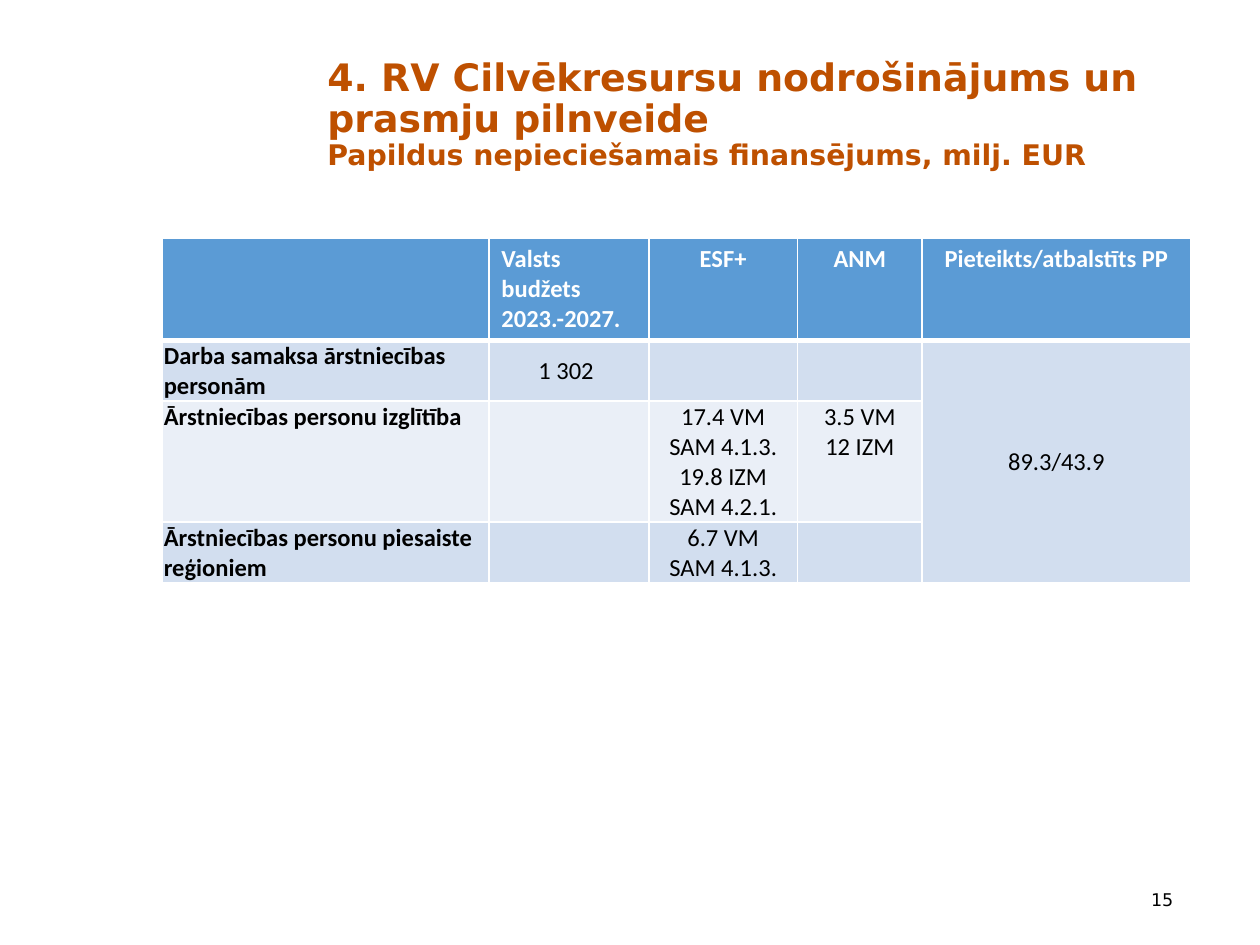
from lxml.etree import SubElement
from pptx import Presentation
from pptx.dml.color import RGBColor
from pptx.enum.text import MSO_ANCHOR, PP_ALIGN
from pptx.oxml.ns import qn
from pptx.util import Inches, Pt

COLS = [2.59, 1.27, 1.18, 0.99, 2.13]
ROWS = [0.81, 0.48, 0.96, 0.48]
FILLS = ["5B9BD5", "D2DEEF", "EAEFF7", "D2DEEF"]
CELLS = [
    ["", "Valsts budžets\n2023.-2027.", "ESF+", "ANM", "Pieteikts/atbalstīts PP"],
    ["Darba samaksa ārstniecības personām", "1 302 ", "", "", "89.3/43.9"],
    ["Ārstniecības personu izglītība", "",
     "17.4 VM\nSAM 4.1.3.\v19.8 IZM\nSAM 4.2.1.", "3.5 VM\v12 IZM", ""],
    ["Ārstniecības personu piesaiste reģioniem", "", "6.7 VM\nSAM 4.1.3.", "", ""],
]


def rgb(color):
    """Turn a hex string into a colour."""
    return RGBColor.from_string(color)


def add_run(p, text, font, size, color, bold=False):
    """Add one formatted run to a paragraph."""
    r = p.add_run()
    r.text = text
    r.font.name = font
    r.font.size = Pt(size)
    r.font.bold = bold
    r.font.color.rgb = rgb(color)


def add_box(s, left, top, width, height):
    """Add a wrapping text box and return its text frame."""
    tf = s.shapes.add_textbox(Inches(left), Inches(top), Inches(width), Inches(height)).text_frame
    tf.word_wrap = True
    return tf


def add_title(s, left, top, width, height):
    """Place the two-level heading."""
    p = add_box(s, left, top, width, height).paragraphs[0]
    p.line_spacing = 0.9
    add_run(p, "4. RV Cilvēkresursu nodrošinājums un prasmju pilnveide",
            "DejaVu Sans", 21.6, "BE5000", True)
    p.add_line_break()
    add_run(p, "Papildus nepieciešamais finansējums, milj. EUR",
            "DejaVu Sans", 16.2, "BE5000", True)


def add_page_number(s, left, top, width, height):
    """Place the page number at the right of its box."""
    tf = add_box(s, left, top, width, height)
    tf.vertical_anchor = MSO_ANCHOR.MIDDLE
    p = tf.paragraphs[0]
    p.alignment = PP_ALIGN.RIGHT
    add_run(p, "15", "DejaVu Sans", 10, "000000")


def set_borders(cell, bottom):
    """Draw white borders around a cell, with a given bottom width."""
    tcPr = cell._tc.get_or_add_tcPr()
    for side, width in (("L", 1), ("R", 1), ("T", 1), ("B", bottom)):
        ln = SubElement(tcPr, qn(f"a:ln{side}"), w=str(Pt(width)))
        fill = SubElement(ln, qn("a:solidFill"))
        SubElement(fill, qn("a:srgbClr"), val="FFFFFF")


def fill_cell(cell, text, row, col):
    """Format a cell by its place in the table and write its text."""
    header = row == 0
    set_borders(cell, 3 if header else 1)
    cell.fill.solid()
    cell.fill.fore_color.rgb = rgb(FILLS[row])
    if not text:
        return
    if not header:
        cell.margin_left = cell.margin_top = cell.margin_right = Inches(0.01)
        cell.margin_bottom = 0
        if col in (1, 2, 4):
            cell.vertical_anchor = MSO_ANCHOR.MIDDLE
    tf = cell.text_frame
    for i, line in enumerate(text.split("\n")):
        p = tf.add_paragraph() if i else tf.paragraphs[0]
        centred = col > 1 or (col == 1 and not header)
        p.alignment = PP_ALIGN.CENTER if centred else PP_ALIGN.LEFT
        for j, part in enumerate(line.split("\v")):
            if j:
                p.add_line_break()
            add_run(p, part, "Calibri", 14, "FFFFFF" if header else "000000",
                    header or col == 0)


def add_funding_table(s, left, top, width, height):
    """Place the funding table, sharing the box out by column and row."""
    table = s.shapes.add_table(len(ROWS), len(COLS), Inches(left), Inches(top),
                               Inches(width), Inches(height)).table
    for column, share in zip(table.columns, COLS):
        column.width = Inches(width * share / sum(COLS))
    for line, share in zip(table.rows, ROWS):
        line.height = Inches(height * share / sum(ROWS))
    for row, texts in enumerate(CELLS):
        for col, text in enumerate(texts):
            fill_cell(table.cell(row, col), text, row, col)
    table.cell(1, 4).merge(table.cell(3, 4))


def main():
    """Build and save the slide."""
    prs = Presentation()
    prs.slide_width, prs.slide_height = Inches(10), Inches(7.5)
    s = prs.slides.add_slide(prs.slide_layouts[6])
    add_funding_table(s, 1.29, 1.89, sum(COLS), sum(ROWS))
    add_title(s, 2.5, 0.42, 6.92, 1.04)
    add_page_number(s, 8.56, 6.94, 0.85, 0.4)
    prs.save("out.pptx")


if __name__ == "__main__":
    main()
